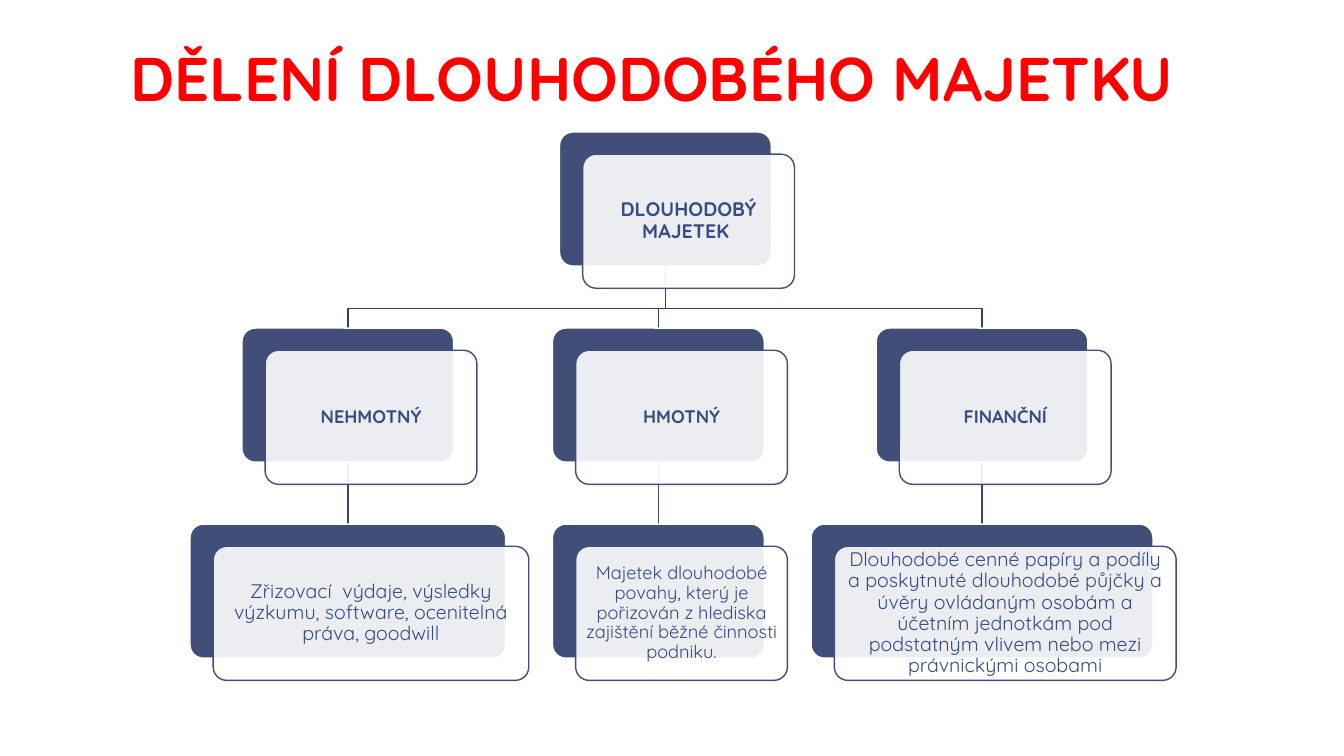
import lxml.etree
import pptx
import pptx.dml.color
import pptx.enum.shapes
import pptx.enum.text
import pptx.oxml.ns
import pptx.util

Inches = pptx.util.Inches
FONT = "Quicksand"
NAVY = "414E77"
TEXT_BLUE = "374C81"
ELBOW_BLUE = "343E5F"
STEM_BLUE = "3B476C"
WHITE = "FFFFFF"
RED = "FF0000"

CARD_WIDTH, CARD_HEIGHT = 2.1, 1.33
CARD_OFFSET_X, CARD_OFFSET_Y = 0.23, 0.22
ROOT_CENTER = 6.6
FIRST_ROW_TOP, ROW_STEP = 1.31, 1.945
ROW_TOPS = [FIRST_ROW_TOP + ROW_STEP * row for row in range(3)]
ELBOW_Y = 3.06

# Column center, category, detail, detail width, detail text size
BRANCHES = [
    (3.45, "NEHMOTNÝ",
     "Zřizovací  výdaje, výsledky výzkumu, software, ocenitelná práva, goodwill", 3.13, 14),
    (6.53, "HMOTNÝ",
     "Majetek dlouhodobé povahy, který je pořizován z hlediska zajištění běžné "
     "činnosti podniku.", 2.1, 13),
    (9.74, "FINANČNÍ",
     "Dlouhodobé cenné papíry a podíly a poskytnuté dlouhodobé půjčky a úvěry "
     "ovládaným osobám a účetním jednotkám pod podstatným vlivem nebo mezi "
     "právnickými osobami", 3.39, 14),
]


def paint(color_format, hex_color):
    color_format.rgb = pptx.dml.color.RGBColor.from_string(hex_color)


def set_line(line, hex_color):
    paint(line.color, hex_color)
    line.width = pptx.util.Pt(1)


def write_text(shape, text, size, color=TEXT_BLUE, bold=False, spacing=0.9,
               anchor=pptx.enum.text.MSO_ANCHOR.MIDDLE, margins=(0.06, 0.06)):
    """Fill the shape with one centred paragraph; margins are horizontal, vertical."""
    frame = shape.text_frame
    frame.word_wrap = True
    frame.auto_size = pptx.enum.text.MSO_AUTO_SIZE.NONE
    frame.vertical_anchor = anchor
    frame.margin_left = frame.margin_right = Inches(margins[0])
    frame.margin_top = frame.margin_bottom = Inches(margins[1])
    paragraph = frame.paragraphs[0]
    paragraph.alignment = pptx.enum.text.PP_ALIGN.CENTER
    paragraph.line_spacing = spacing
    run = paragraph.add_run()
    run.text = text
    run.font.name = FONT
    run.font.size = pptx.util.Pt(size)
    run.font.bold = bold
    paint(run.font.color, color)


def add_title(slide, left, top, width, height):
    title = slide.shapes.title
    title.left, title.top = Inches(left), Inches(top)
    title.width, title.height = Inches(width), Inches(height)
    write_text(title, "DĚLENÍ DLOUHODOBÉHO MAJETKU ", 44, color=RED, bold=True,
               spacing=0.85, anchor=pptx.enum.text.MSO_ANCHOR.BOTTOM, margins=(0.13, 0.07))


def add_rounded_box(slide, left, top, width, fill, line):
    box = slide.shapes.add_shape(
        pptx.enum.shapes.MSO_SHAPE.ROUNDED_RECTANGLE,
        Inches(left), Inches(top), Inches(width), Inches(CARD_HEIGHT))
    box.adjustments[0] = 0.1
    box.shadow.inherit = False
    box.fill.solid()
    paint(box.fill.fore_color, fill)
    set_line(box.line, line)
    return box


def add_card(slide, center, top, text, size, width=CARD_WIDTH, bold=False):
    """Draw a dark box with a translucent text box over it; return the dark box."""
    left = center - width / 2
    back = add_rounded_box(slide, left, top, width, NAVY, WHITE)
    front = add_rounded_box(slide, left + CARD_OFFSET_X, top + CARD_OFFSET_Y,
                            width, WHITE, NAVY)
    color = front.fill._xPr.find(".//" + pptx.oxml.ns.qn("a:srgbClr"))
    lxml.etree.SubElement(color, pptx.oxml.ns.qn("a:alpha"), val="90000")
    write_text(front, text, size, bold=bold)
    return back


def add_elbow(slide, center):
    """Draw the bent line from the root card to the category card at center."""
    builder = slide.shapes.build_freeform(
        Inches(ROOT_CENTER), Inches(ROW_TOPS[0] + CARD_HEIGHT))
    builder.add_line_segments(
        [(Inches(x), Inches(y)) for x, y in
         ((ROOT_CENTER, ELBOW_Y), (center, ELBOW_Y), (center, ROW_TOPS[1]))],
        close=False)
    elbow = builder.convert_to_shape()
    elbow.shadow.inherit = False
    elbow.fill.background()
    set_line(elbow.line, ELBOW_BLUE)


def add_stem(slide, center):
    stem = slide.shapes.add_connector(
        pptx.enum.shapes.MSO_CONNECTOR.STRAIGHT,
        Inches(center), Inches(ROW_TOPS[1] + CARD_HEIGHT),
        Inches(center), Inches(ROW_TOPS[2]))
    set_line(stem.line, STEM_BLUE)
    lxml.etree.SubElement(stem._element.spPr, pptx.oxml.ns.qn("a:effectLst"))
    return stem


def add_hierarchy(slide):
    """Draw all lines first so that they lie behind the cards, then join them."""
    stems = []
    for center, *_ in BRANCHES:
        add_elbow(slide, center)
        stems.append(add_stem(slide, center))

    add_card(slide, ROOT_CENTER, ROW_TOPS[0], "DLOUHODOBÝ MAJETEK ", 14, bold=True)
    for stem, (center, category, detail, width, size) in zip(stems, BRANCHES):
        category_card = add_card(slide, center, ROW_TOPS[1], category, 13, bold=True)
        detail_card = add_card(slide, center, ROW_TOPS[2], detail, size, width=width)
        stem.begin_connect(category_card, 2)
        stem.end_connect(detail_card, 0)


def main():
    presentation = pptx.Presentation()
    presentation.slide_width = Inches(13.33)
    presentation.slide_height = Inches(7.5)
    slide = presentation.slides.add_slide(presentation.slide_layouts[5])
    add_title(slide, 1, 0.21, 11.11, 0.99)
    add_hierarchy(slide)
    presentation.save("out.pptx")


if __name__ == "__main__":
    main()
